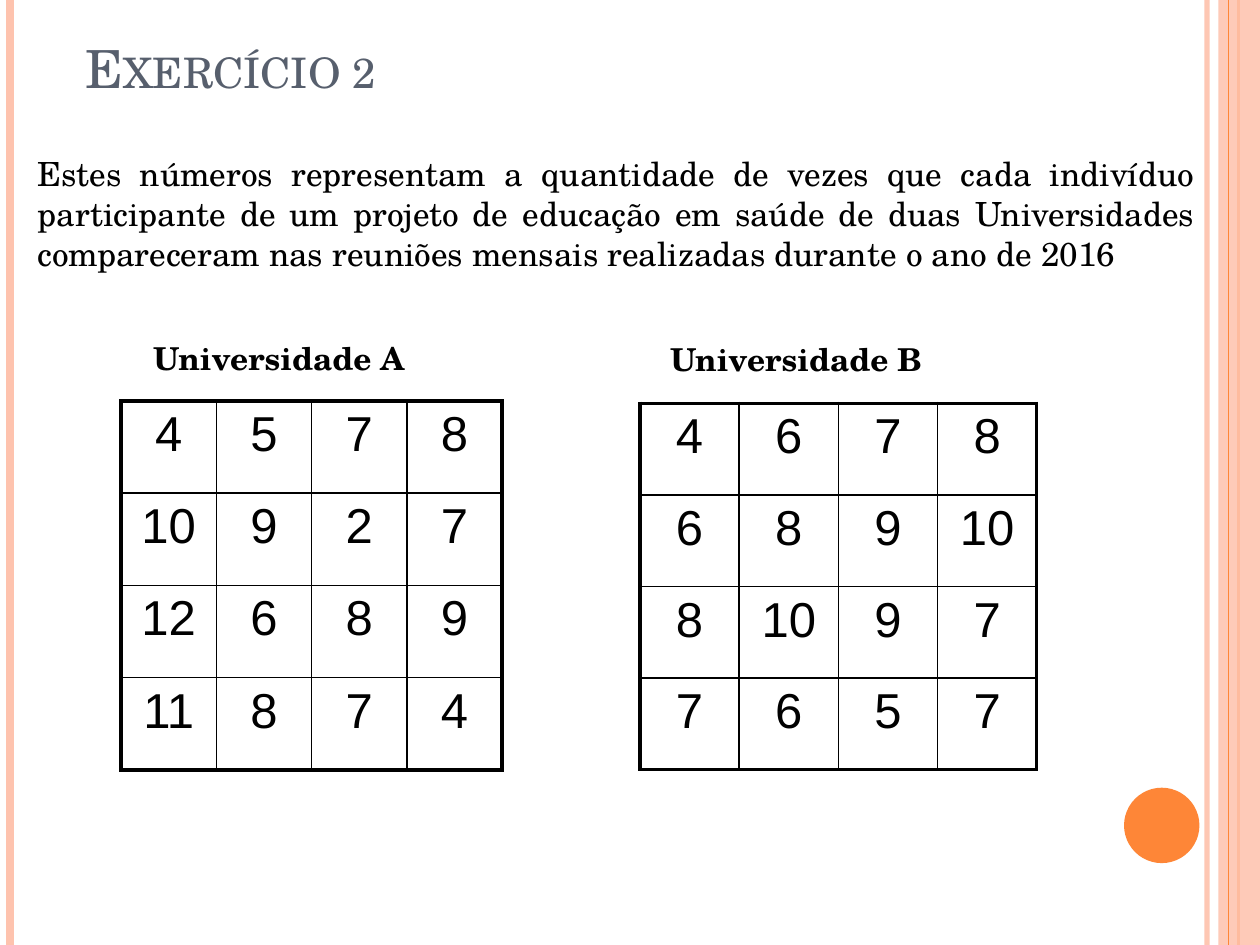
"""Build the exercise slide with two attendance tables."""
from dataclasses import dataclass
from lxml.etree import SubElement as Sub
from pptx import Presentation
from pptx.dml.color import RGBColor as RGB
from pptx.enum.shapes import MSO_CONNECTOR as Link, MSO_SHAPE as Form
from pptx.enum.text import MSO_ANCHOR as Anchor, PP_ALIGN as Align
from pptx.oxml.ns import qn
from pptx.util import Cm, Pt


@dataclass(frozen=True)
class Theme:
    peach: str = "FEC3AE"
    orange: str = "FE8637"
    slate: str = "575F6D"
    black: str = "000000"
    serif: str = "TeX Gyre Schola"
    sans: str = "Arial"
    title: int = 30
    body: int = 19
    label: int = 18
    digit: int = 28
    thick: float = 2.25
    thin: float = 1


T = Theme()
WIDE, HIGH = 25.4, 19.05
TITLE = "Exercício 2"
BODY = ("Estes números representam a quantidade de vezes que cada indivíduo "
        "participante de um projeto de educação em saúde de duas Universidades "
        "compareceram nas reuniões mensais realizadas durante o ano de 2016")
GROUPS = [
    dict(name="Universidade A", label=(2.84, 6.71), box=(2.44, 8.08, 7.68, 7.44),
         rows=[(4, 5, 7, 8), (10, 9, 2, 7), (12, 6, 8, 9), (11, 8, 7, 4)]),
    dict(name="Universidade B", label=(13.26, 6.73), box=(12.9, 8.13, 8, 7.39),
         rows=[(4, 6, 7, 8), (6, 8, 9, 10), (8, 10, 9, 7), (7, 6, 5, 7)]),
]
RULES = [(24.33, T.peach, 3, 93), (0.2, T.peach, 4.5, 100), (24.97, T.orange, 1.5, 100)]
EDGE = (24.77, T.orange, 0.75, 100)
BAND = (24.56, 0, 0.84, HIGH)
DISC = (22.66, 15.88, 1.52, 1.52)


def fade(part, alpha):
    tint = next(part.iter(qn("a:srgbClr")))
    Sub(tint, qn("a:alpha"), val=str(alpha * 1000))


def rule(x, color, width, alpha):
    line = page.shapes.add_connector(Link.STRAIGHT, Cm(x), 0, Cm(x), Cm(HIGH))
    line.line.color.rgb = RGB.from_string(color)
    line.line.width = Pt(width)
    props = line._element.spPr
    if alpha < 100:
        fade(props, alpha)
    Sub(props, qn("a:effectLst"))


def solid(form, box, color, alpha=100):
    shape = page.shapes.add_shape(form, *map(Cm, box))
    shape.shadow.inherit = False
    shape.fill.solid()
    shape.fill.fore_color.rgb = RGB.from_string(color)
    shape.line.fill.background()
    if alpha < 100:
        fade(shape._element.spPr, alpha)


def style(frame, size, face, color=T.black, bold=False, align=Align.LEFT):
    para = frame.paragraphs[0]
    para.alignment = align
    font = para.runs[0].font
    font.size, font.name, font.bold = Pt(size), face, bold
    font.color.rgb = RGB.from_string(color)
    return para.runs[0]


def write(text, box, size, wrap=True, anchor=Anchor.TOP, **look):
    frame = page.shapes.add_textbox(*map(Cm, box)).text_frame
    frame.word_wrap = wrap
    frame.vertical_anchor = anchor
    frame.text = text
    return style(frame, size, T.serif, **look)


def border(cell, outer):
    props = cell._tc.get_or_add_tcPr()
    for side, thick in zip("LRTB", outer):
        width = Pt(T.thick if thick else T.thin)
        line = Sub(props, qn("a:ln" + side), w=str(width))
        Sub(Sub(line, qn("a:solidFill")), qn("a:srgbClr"), val=T.black)
    cell.fill.background()


def grid(rows, box):
    high, wide = len(rows), len(rows[0])
    table = page.shapes.add_table(high, wide, *map(Cm, box)).table
    table.first_row = table.horz_banding = False
    for col in table.columns:
        col.width = Cm(box[2] / wide)
    for r, row in enumerate(rows):
        table.rows[r].height = Cm(box[3] / high)
        for c, value in enumerate(row):
            cell = table.cell(r, c)
            cell.text_frame.text = str(value)
            style(cell.text_frame, T.digit, T.sans, align=Align.CENTER)
            border(cell, (c == 0, c == wide - 1, r == 0, r == high - 1))


deck = Presentation()
deck.slide_width, deck.slide_height = Cm(WIDE), Cm(HIGH)
page = deck.slides.add_slide(deck.slide_layouts[6])

for item in RULES:
    rule(*item)
solid(Form.RECTANGLE, BAND, T.peach, 87)
rule(*EDGE)
solid(Form.OVAL, DISC, T.orange)

head = write(TITLE, (1.47, 0.1, 22.86, 2.03), T.title, anchor=Anchor.BOTTOM, color=T.slate)
head._r.get_or_add_rPr().set("cap", "small")
for group in GROUPS:
    grid(group["rows"], group["box"])
write(BODY, (0.51, 2.97, 23.83, 2.69), T.body, align=Align.JUSTIFY)
for group in GROUPS:
    write(group["name"], (*group["label"], 5.66, 1.02), T.label, wrap=False, bold=True)

deck.save("out.pptx")
